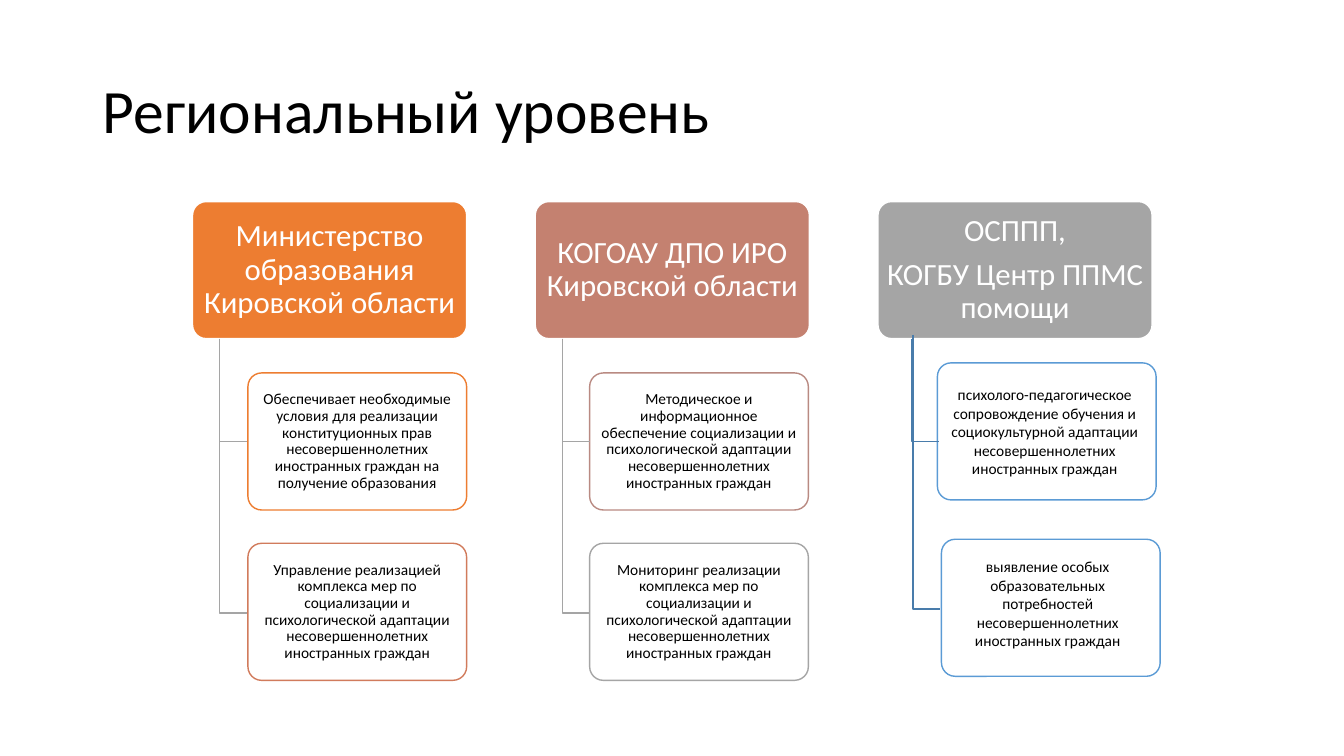
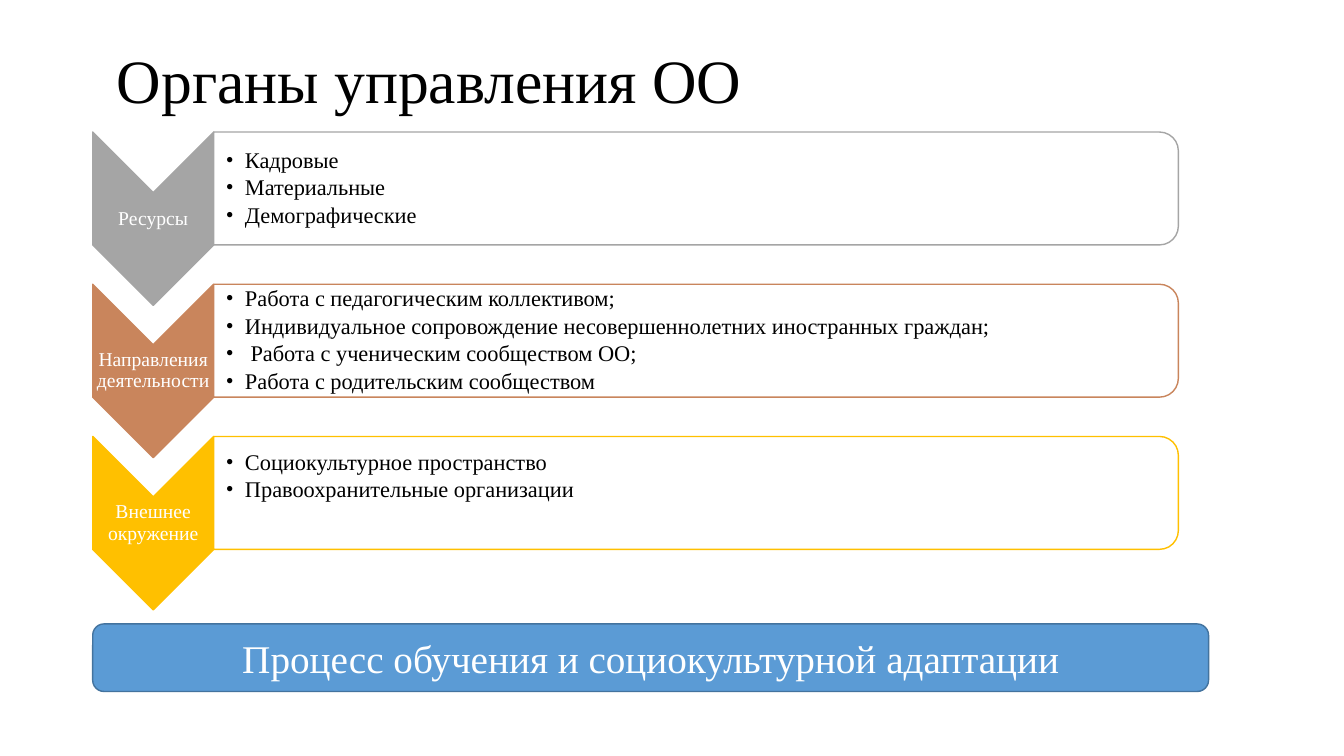
"""Builds two slides: regional bodies as trees, and school management as rows."""
import dataclasses

import lxml.etree
import pptx
import pptx.dml.color
import pptx.enum.shapes
import pptx.enum.text
import pptx.oxml.ns
import pptx.util

RGB = pptx.dml.color.RGBColor
KIND = pptx.enum.shapes.MSO_SHAPE
ALIGN = pptx.enum.text.PP_ALIGN
MIDDLE = pptx.enum.text.MSO_ANCHOR.MIDDLE
Pt = pptx.util.Pt

WHITE = RGB(0xFF, 0xFF, 0xFF)
BLACK = RGB(0x00, 0x00, 0x00)
ORANGE = RGB(0xED, 0x7D, 0x31)
RUST = RGB(0xD1, 0x7B, 0x5C)
ROSE = RGB(0xC4, 0x81, 0x70)
MAUVE = RGB(0xB9, 0x8A, 0x82)
GRAY = RGB(0xA5, 0xA5, 0xA5)
BLUE = RGB(0x5B, 0x9B, 0xD5)
STEEL = RGB(0x49, 0x7C, 0xAB)
NAVY = RGB(0x43, 0x73, 0x9E)
BROWN = RGB(0xC9, 0x85, 0x5C)
GOLD = RGB(0xFF, 0xC0, 0x00)

SANS = "Calibri"
SERIF = "Times New Roman"
SCALE = 9144
TREE_X, TREE_Y, TREE_STEP = 191, 200, 340
HEAD_W, CARD_W, BOX_H = 272, 217, 136
BEND = 27
ROW_X, ROW_Y, ROW_STEP = 92, 131, 151
ARROW_W, ARROW_H = 120, 172
BAR_W, BAR_H = 957, 112


@dataclasses.dataclass(frozen=True)
class Box:
    x: int
    y: int
    w: int
    h: int


@dataclasses.dataclass(frozen=True)
class Pad:
    left: int = 1
    top: int = 1
    right: int = 1
    low: int = 1


@dataclasses.dataclass(frozen=True)
class Style:
    font: str
    size: int
    color: RGB
    align: ALIGN = ALIGN.CENTER
    lead: float = 0.9
    gap: float = 0
    bullet: bool = False


@dataclasses.dataclass(frozen=True)
class Card:
    text: str
    edge: RGB
    dx: int
    y: int
    stem: Box
    pad: Pad = Pad(2, 2, 2, 2)


@dataclasses.dataclass(frozen=True)
class Tree:
    lines: tuple[str, ...]
    fill: RGB
    cards: tuple[Card, ...]
    ink: RGB = GRAY
    lead: float = 0.9


@dataclasses.dataclass(frozen=True)
class Row:
    label: str
    color: RGB
    items: tuple[str, ...]
    lift: int = 1


UPPER = Box(27, 336, BEND, 102)
LOWER = Box(27, 336, BEND, 272)

TREES = (
    Tree(("Министерство образования Кировской области",), ORANGE, (
        Card("Обеспечивает необходимые условия для реализации конституционных прав "
             "несовершеннолетних иностранных граждан на получение образования",
             ORANGE, 55, 370, UPPER),
        Card("Управление реализацией комплекса мер по социализации и психологической "
             "адаптации несовершеннолетних иностранных граждан", RUST, 55, 539, LOWER))),
    Tree(("КОГОАУ ДПО ИРО Кировской области",), ROSE, (
        Card("Методическое и информационное обеспечение социализации и психологической "
             "адаптации несовершеннолетних иностранных граждан", MAUVE, 54, 370, UPPER),
        Card("Мониторинг реализации комплекса мер по социализации и психологической "
             "адаптации несовершеннолетних иностранных граждан", GRAY, 54, 539, LOWER))),
    Tree(("ОСППП,", "КОГБУ Центр ППМС помощи"), GRAY, (
        Card("психолого-педагогическое сопровождение обучения и социокультурной "
             "адаптации несовершеннолетних иностранных граждан", BLUE, 59, 360,
             Box(34, 336, BEND, 102), Pad(6, 4, 10, 4)),
        Card("выявление особых образовательных потребностей несовершеннолетних "
             "иностранных граждан", BLUE, 63, 535,
             Box(35, 332, BEND, 272), Pad(5, 2, 11, 10))),
        STEEL, 1.0),
)

ROWS = (
    Row("Ресурсы", GRAY, ("Кадровые", "Материальные", "Демографические")),
    Row("Направления деятельности", BROWN, (
        "Работа с педагогическим коллективом;",
        "Индивидуальное сопровождение несовершеннолетних иностранных граждан;",
        " Работа с ученическим сообществом ОО;",
        "Работа с родительским сообществом")),
    Row("Внешнее окружение", GOLD,
        ("Социокультурное пространство", "Правоохранительные организации"), 33),
)


def px(size: float) -> int:
    return round(size * SCALE)


def span(box: Box) -> tuple[int, int, int, int]:
    return px(box.x), px(box.y), px(box.w), px(box.h)


def mark(para, font: str) -> None:
    props = para._p.get_or_add_pPr()
    props.set("marL", str(px(19)))
    props.set("indent", str(px(-19)))
    face = lxml.etree.SubElement(props, pptx.oxml.ns.qn("a:buFont"))
    face.set("typeface", font)
    sign = lxml.etree.SubElement(props, pptx.oxml.ns.qn("a:buChar"))
    sign.set("char", "•")


def write(shape, lines: tuple[str, ...], style: Style, pad: Pad = Pad()) -> None:
    frame = shape.text_frame
    frame.word_wrap = True
    frame.auto_size = pptx.enum.text.MSO_AUTO_SIZE.NONE
    frame.vertical_anchor = MIDDLE
    frame.margin_left, frame.margin_top = px(pad.left), px(pad.top)
    frame.margin_right, frame.margin_bottom = px(pad.right), px(pad.low)
    for i, line in enumerate(lines):
        para = frame.add_paragraph() if i else frame.paragraphs[0]
        para.alignment = style.align
        para.line_spacing = style.lead
        para.space_before = Pt(style.gap if i else 0)
        if style.bullet:
            mark(para, style.font)
        run = para.add_run()
        run.text = line
        run.font.name = style.font
        run.font.size = Pt(style.size)
        run.font.color.rgb = style.color


def trim(shape, edge: RGB) -> None:
    shape.shadow.inherit = False
    shape.line.color.rgb = edge
    shape.line.width = Pt(1)


def draw(slide, kind: KIND, box: Box, fill: RGB, edge: RGB, turn: bool = False):
    if turn:
        box = Box(box.x + (box.w - box.h) / 2, box.y + (box.h - box.w) / 2, box.h, box.w)
    shape = slide.shapes.add_shape(kind, *span(box))
    shape.rotation = 90 if turn else 0
    shape.fill.solid()
    shape.fill.fore_color.rgb = fill
    trim(shape, edge)
    return shape


def bend(slide, x: int, stem: Box, ink: RGB) -> None:
    left, top, wide, high = span(stem)
    left += px(x)
    pen = slide.shapes.build_freeform(left, top)
    pen.add_line_segments(((left, top + high), (left + wide, top + high)), close=False)
    shape = pen.convert_to_shape()
    shape.fill.background()
    trim(shape, ink)


def label(slide, box: Box, lines: tuple[str, ...], style: Style, pad: Pad = Pad()) -> None:
    write(slide.shapes.add_textbox(*span(box)), lines, style, pad)


def start(deck, text: str, font: str, y: int, left: int):
    slide = deck.slides.add_slide(deck.slide_layouts[5])
    title = slide.shapes.title
    title.left, title.top, title.width, title.height = span(Box(92, y, 1150, 145))
    write(title, (text,), Style(font, 44, BLACK, ALIGN.LEFT), Pad(left, 5, 10, 5))
    return slide


def plant(slide, tree: Tree, x: int) -> None:
    head = draw(slide, KIND.ROUNDED_RECTANGLE, Box(x, TREE_Y, HEAD_W, BOX_H), tree.fill, WHITE)
    head.adjustments[0] = 0.1
    write(head, tree.lines, Style(SANS, 22, WHITE, gap=8), Pad(5, 3, 5, 3))
    for card in tree.cards:
        box = Box(x + card.dx, card.y, CARD_W, BOX_H)
        shape = draw(slide, KIND.ROUNDED_RECTANGLE, box, WHITE, card.edge)
        shape.adjustments[0] = 0.1
        write(shape, (card.text,), Style(SANS, 11, BLACK, lead=tree.lead), card.pad)
        bend(slide, x, card.stem, tree.ink)


def lay(slide, row: Row, y: int) -> None:
    draw(slide, KIND.CHEVRON, Box(ROW_X, y, ARROW_W, ARROW_H), row.color, row.color, True)
    label(slide, Box(ROW_X, y + 60, ARROW_W, 52), (row.label,), Style(SERIF, 14, WHITE))
    left = ROW_X + ARROW_W
    draw(slide, KIND.ROUND_2_SAME_RECTANGLE, Box(left, y, BAR_W, BAR_H), WHITE, row.color, True)
    label(slide, Box(left, y + 6, BAR_W - 6, BAR_H - 12), row.items,
          Style(SERIF, 16, BLACK, ALIGN.LEFT, gap=2.4, bullet=True), Pad(12, 1, 1, row.lift))


def main() -> None:
    deck = pptx.Presentation()
    deck.slide_width, deck.slide_height = px(1333.33), px(750)

    slide = start(deck, "Региональный уровень", SANS, 40, 10)
    for i, tree in enumerate(TREES):
        plant(slide, tree, TREE_X + i * TREE_STEP)

    slide = start(deck, "Органы управления ОО", SERIF, 10, 24)
    for i, row in enumerate(ROWS):
        lay(slide, row, ROW_Y + i * ROW_STEP)
    base = draw(slide, KIND.ROUNDED_RECTANGLE, Box(ROW_X, 619, 1107, 67), BLUE, NAVY)
    write(base, ("Процесс обучения и социокультурной адаптации",),
          Style(SERIF, 28, WHITE, lead=1.0), Pad(10, 5, 10, 5))

    deck.save("out.pptx")


if __name__ == "__main__":
    main()
